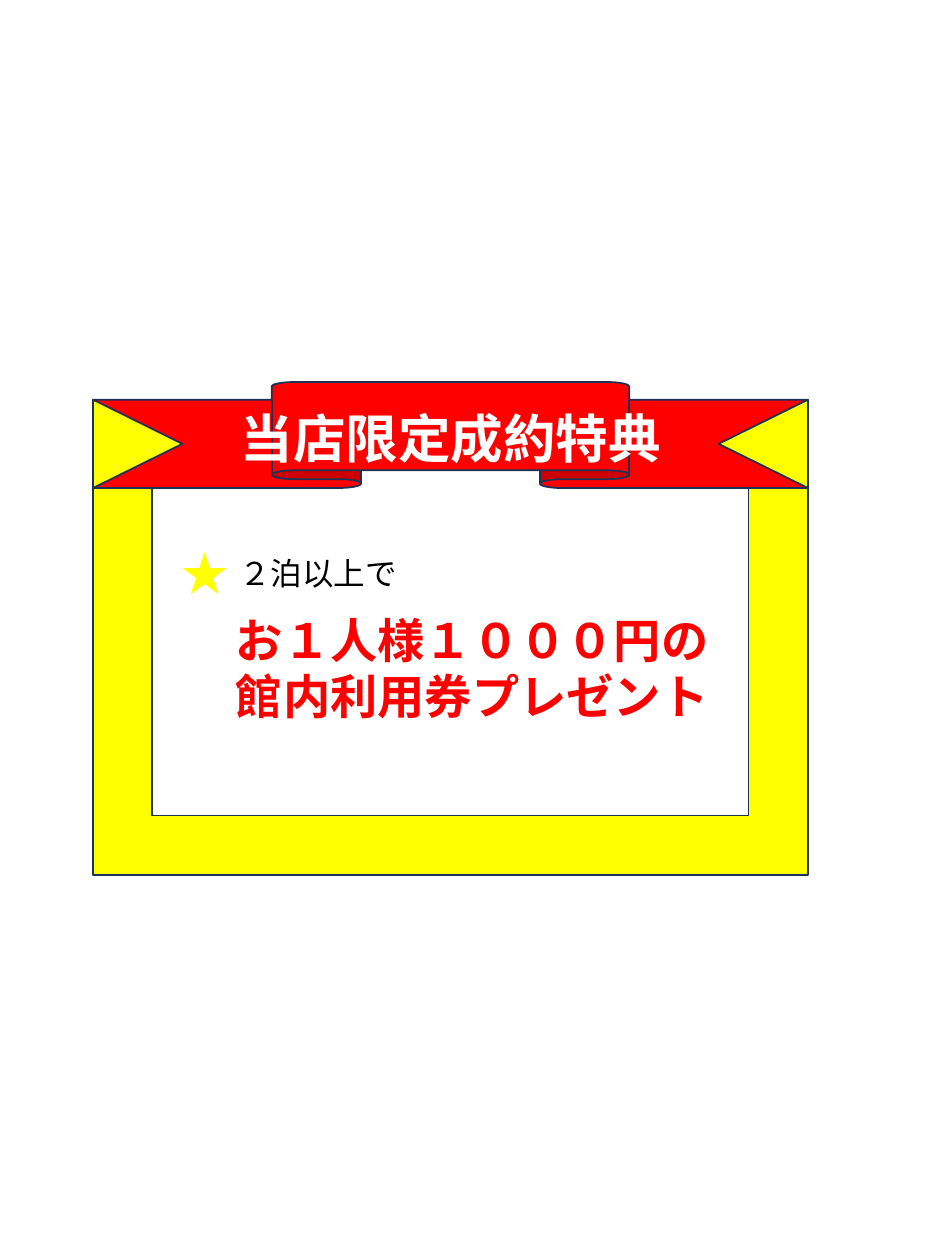
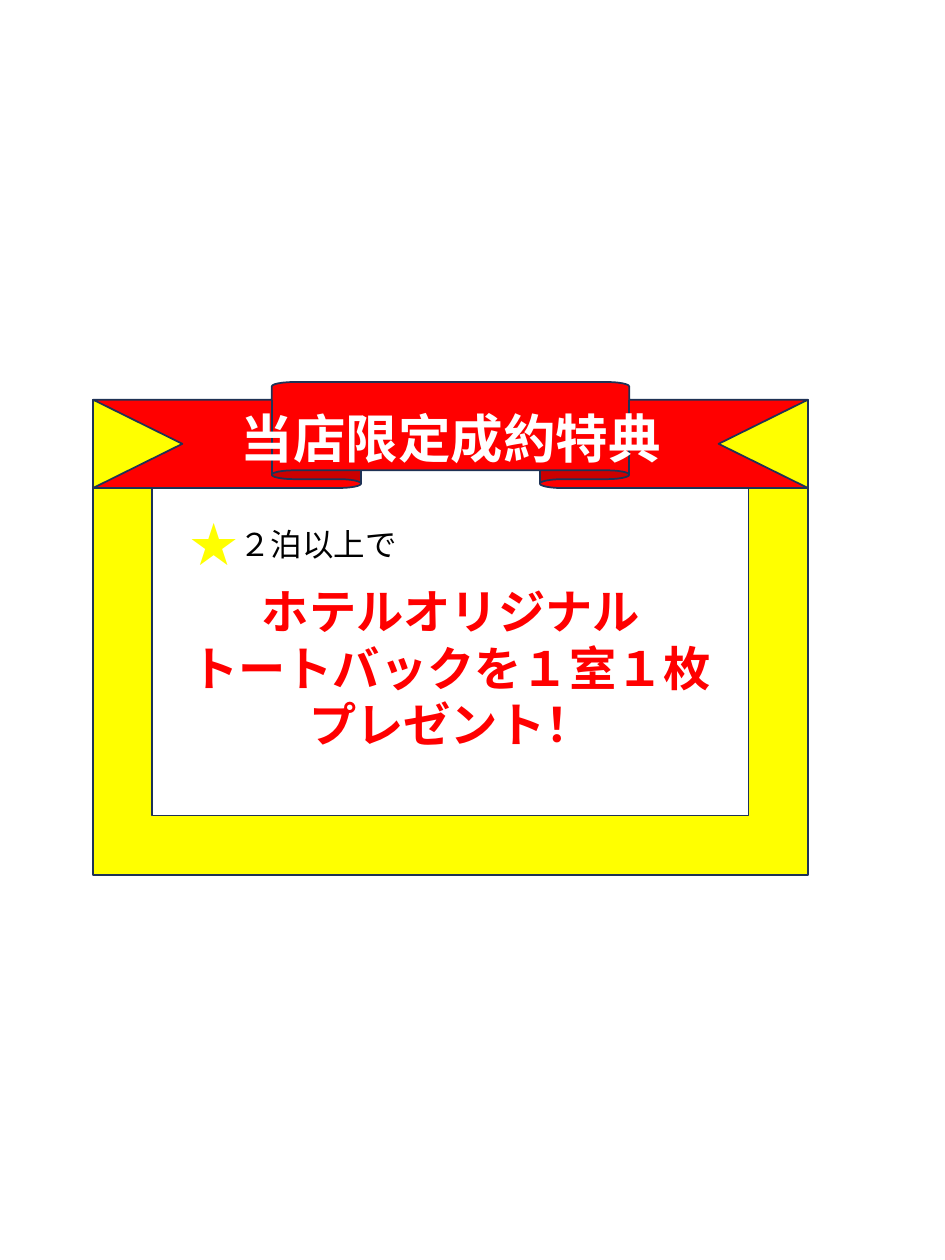
"""Build two coupon slides for a shop-only booking benefit."""
from lxml import etree
from pptx import Presentation
from pptx import util as u
from pptx.dml.color import RGBColor
from pptx.enum import shapes, text
from pptx.oxml import ns

YELLOW = RGBColor(0xFF, 0xFF, 0x00)
RED = RGBColor(0xFF, 0x00, 0x00)
WHITE = RGBColor(0xFF, 0xFF, 0xFF)
BLACK = RGBColor(0x00, 0x00, 0x00)
NAVY = RGBColor(0x1E, 0x32, 0x56)
ORANGE = RGBColor(0xED, 0x7D, 0x31)

FONT = "Noto Sans CJK JP"
PX = 914400 / 126
TITLE_ONLY = 5
HEADING = "当店限定成約特典"
CONDITION = "２泊以上で"

HEADING_STYLE = {"size": u.Pt(30), "bold": True, "color": WHITE}
STAR_STYLE = {"size": u.Pt(27), "bold": True, "color": YELLOW}
CONDITION_STYLE = {"size": u.Pt(18), "bold": False, "color": BLACK}
GIFT_STYLE = {"size": u.Pt(27), "bold": True, "color": RED}

OFFERS = [
    {"star_left": 161, "top": 549, "gift_box": (224, 496, 123),
     "gift": ["お１人様１０００円の", "館内利用券プレゼント"]},
    {"star_left": 170, "top": 520, "gift_box": (179, 544, 181),
     "gift": ["ホテルオリジナル", "トートバックを１室１枚", "プレゼント！"]},
]


def px(*lengths):
    """Turn pixel lengths into EMU."""
    return [u.Emu(round(length * PX)) for length in lengths]


def style_run(run, style):
    """Apply font, size, weight and colour to a run."""
    run.font.name = FONT
    for key in ("size", "bold"):
        setattr(run.font, key, style[key])
    run.font.color.rgb = style["color"]
    latin = run.font._element.find(ns.qn("a:latin"))
    east_asian = etree.Element(ns.qn("a:ea"), typeface=FONT)
    latin.addnext(east_asian)


def outline_run(run, color, width):
    """Give the letters of a run an outline."""
    line = etree.Element(ns.qn("a:ln"), w=str(int(width)))
    fill = etree.SubElement(line, ns.qn("a:solidFill"))
    etree.SubElement(fill, ns.qn("a:srgbClr"), val=str(color))
    run.font._element.insert(0, line)


def write_lines(box, lines, style, wrap=False):
    """Fill a box with centred lines and return their runs."""
    frame = box.text_frame
    side, edge = px(9, 5)
    settings = {"margin_left": side, "margin_right": side, "margin_top": edge,
                "margin_bottom": edge, "word_wrap": wrap,
                "auto_size": text.MSO_AUTO_SIZE.SHAPE_TO_FIT_TEXT,
                "vertical_anchor": text.MSO_ANCHOR.TOP}
    for key, value in settings.items():
        setattr(frame, key, value)
    runs = []
    for index, line in enumerate(lines):
        paragraph = frame.add_paragraph() if index else frame.paragraphs[0]
        paragraph.alignment = text.PP_ALIGN.CENTER
        paragraph.line_spacing = 1.0
        run = paragraph.add_run()
        run.text = line
        style_run(run, style)
        runs.append(run)
    return runs


def add_text(slide, box, lines, style, wrap=False):
    """Add a text box and return its runs."""
    return write_lines(slide.shapes.add_textbox(*px(*box)), lines, style, wrap)


def add_panel(slide, kind, box, color):
    """Add a filled shape with the shared navy outline."""
    panel = slide.shapes.add_shape(kind, *px(*box))
    panel.shadow.inherit = False
    panel.fill.solid()
    panel.fill.fore_color.rgb = color
    panel.line.color.rgb = NAVY
    panel.line.width = u.Pt(1)


def add_heading(slide):
    """Place the slide title in front of the ribbon."""
    title = slide.shapes.title
    title.left, title.top, title.width, title.height = px(229, 401, 444, 73)
    write_lines(title, [HEADING], HEADING_STYLE)
    title.element.getparent().append(title.element)


def add_offer(slide, offer):
    """Add the star, the condition and the gift of one offer."""
    top = offer["top"]
    left, width, height = offer["gift_box"]
    star, = add_text(slide, (offer["star_left"], top - 10, 88, 67), ["★"],
                     STAR_STYLE, wrap=True)
    outline_run(star, ORANGE, u.Pt(1.75))
    add_text(slide, (229, top, 178, 48), [CONDITION], CONDITION_STYLE)
    add_text(slide, (left, top + 57, width, height), offer["gift"], GIFT_STYLE)


def main():
    """Build and save the presentation."""
    deck = Presentation()
    deck.slide_width, deck.slide_height = px(945, 1260)
    for offer in OFFERS:
        slide = deck.slides.add_slide(deck.slide_layouts[TITLE_ONLY])
        add_panel(slide, shapes.MSO_SHAPE.FRAME, (93, 400, 715, 475), YELLOW)
        add_panel(slide, shapes.MSO_SHAPE.UP_RIBBON, (93, 382, 715, 106), RED)
        add_heading(slide)
        add_offer(slide, offer)
    deck.save("out.pptx")


if __name__ == "__main__":
    main()
